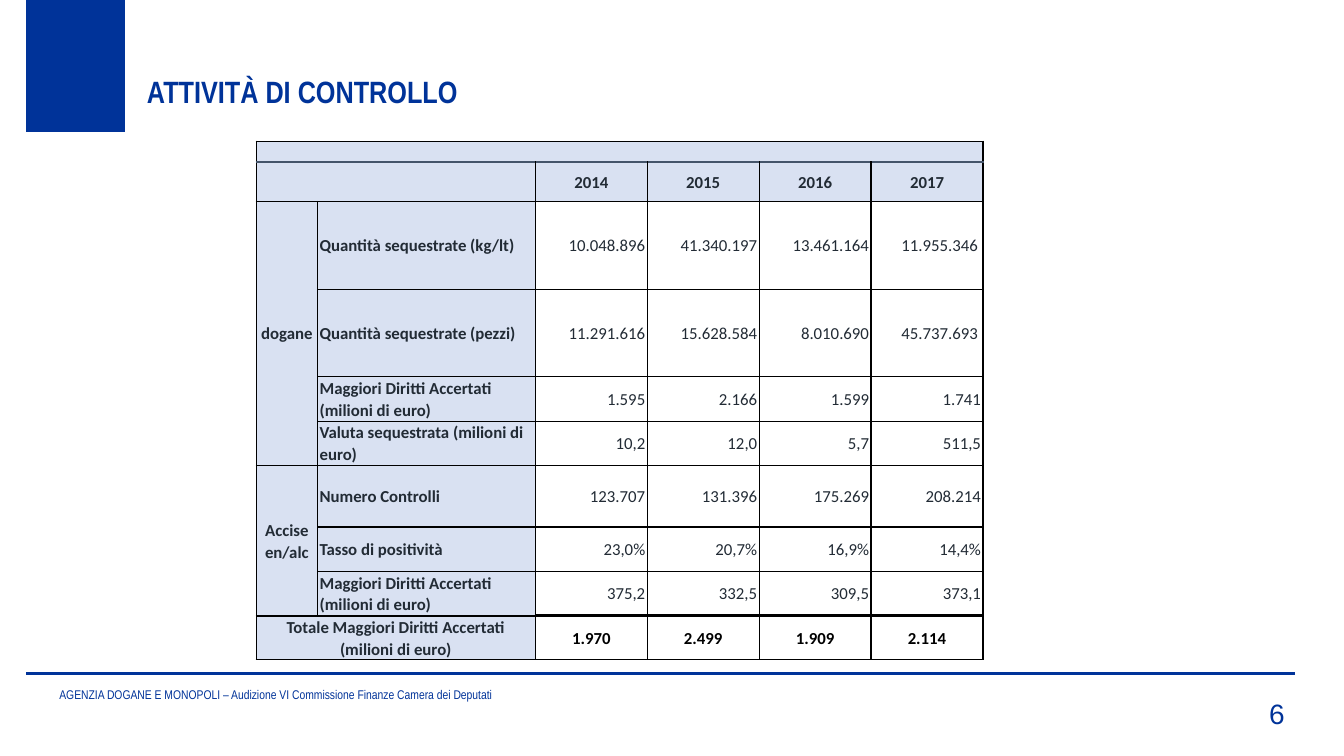
from dataclasses import dataclass

from lxml import etree
from pptx import Presentation
from pptx import util as u
from pptx.dml.color import RGBColor
from pptx.enum import shapes, text
from pptx.oxml import ns

COLORS = {
    "blue": "003399",
    "pale": "D9E1F2",
    "white": "FFFFFF",
    "black": "000000",
    "slate": "44546A",
    "ink": "222B35",
}
LEFT, CENTER, RIGHT = text.PP_ALIGN.LEFT, text.PP_ALIGN.CENTER, text.PP_ALIGN.RIGHT
TOP, BOTTOM = text.MSO_ANCHOR.TOP, text.MSO_ANCHOR.BOTTOM
COLUMN_WIDTHS = [0.61, 2.16] + [1.11] * 4
ROW_HEIGHTS = [0.21, 0.39, 0.87, 0.87, 0.44, 0.44, 0.61, 0.44, 0.44, 0.43]
HEADER_ROW, LAST_DETAIL_ROW, TOTAL_ROW = 1, 8, 9
FIRST_YEAR_COLUMN = 2
ROWS = [
    ["", "", "", "", "", ""],
    ["", "", "2014", "2015", "2016", "2017"],
    ["dogane", "Quantità sequestrate (kg/lt)", "10.048.896", "41.340.197", "13.461.164", "11.955.346"],
    ["", "Quantità sequestrate (pezzi)", "11.291.616", "15.628.584", "8.010.690", "45.737.693"],
    ["", "Maggiori Diritti Accertati (milioni di euro)", "1.595", "2.166", "1.599", "1.741"],
    ["", "Valuta sequestrata (milioni di euro)", "10,2", "12,0", "5,7", "511,5"],
    ["Accise en/alc", "Numero Controlli", "123.707", "131.396", "175.269", "208.214"],
    ["", "Tasso di positività", "23,0%", "20,7%", "16,9%", "14,4%"],
    ["", "Maggiori Diritti Accertati (milioni di euro)", "375,2", "332,5", "309,5", "373,1"],
    ["Totale Maggiori Diritti Accertati\n(milioni di euro)", "", "1.970", "2.499", "1.909", "2.114"],
]
MERGES = [((0, 0), (0, 5)), ((1, 0), (1, 1)), ((2, 0), (5, 0)), ((6, 0), (8, 0)), ((9, 0), (9, 1))]


@dataclass
class Label:
    words: str
    left: float
    top: float
    width: float
    height: float
    size: float
    font: str
    bold: bool = False
    align: text.PP_ALIGN = LEFT
    anchor: text.MSO_ANCHOR = TOP
    bottom_inset: float = 0.05


LABELS = [
    Label("ATTIVITÀ DI CONTROLLO", 1.36, 0.67, 11.74, 0.47, 22, "Arial Narrow", bold=True),
    Label("AGENZIA DOGANE E MONOPOLI – Audizione VI Commissione Finanze Camera dei Deputati",
          0.49, 6.61, 9.45, 0.4, 9, "Arial Narrow", anchor=BOTTOM),
    Label("6", 11.68, 6.71, 1.16, 0.54, 20, "Arial", align=RIGHT, anchor=BOTTOM, bottom_inset=0.01),
]


def color(name: str) -> RGBColor:
    return RGBColor.from_string(COLORS[name])


def style_font(para, size: float, font: str, tint: str, bold: bool) -> None:
    para.font.size = u.Pt(size)
    para.font.name = font
    para.font.color.rgb = color(tint)
    para.font.bold = bold


def draw_label(page, label: Label) -> None:
    box = page.shapes.add_textbox(*map(u.Inches, (label.left, label.top, label.width, label.height)))
    frame = box.text_frame
    frame.word_wrap = True
    frame.vertical_anchor = label.anchor
    frame.margin_bottom = u.Inches(label.bottom_inset)
    para = frame.paragraphs[0]
    para.text = label.words
    para.alignment = label.align
    style_font(para, label.size, label.font, "blue", label.bold)


def draw_frame(page) -> None:
    block = page.shapes.add_shape(shapes.MSO_SHAPE.RECTANGLE, *map(u.Inches, (0.26, 0, 0.98, 1.31)))
    block.shadow.inherit = False
    block.fill.solid()
    block.fill.fore_color.rgb = color("blue")
    block.line.fill.background()
    rule = page.shapes.add_connector(
        shapes.MSO_CONNECTOR.STRAIGHT, *map(u.Inches, (0.26, 6.68, 12.84, 6.68)))
    rule.line.color.rgb = color("blue")
    rule.line.width = u.Pt(2.25)
    etree.SubElement(rule._element.spPr, ns.qn("a:effectLst"))


def edge_style(row: int, column: int, side: str) -> tuple[str, float]:
    if (row, side) in ((0, "B"), (HEADER_ROW, "T")):
        return "slate", 1.5
    if (row, side) in ((LAST_DETAIL_ROW, "B"), (TOTAL_ROW, "T")):
        return "black", 2.25 if column >= FIRST_YEAR_COLUMN else 1.5
    if side == "B" and row == 6 and column == 0:
        return "black", 1.5
    return "black", 1


def draw_borders(cell, row: int, column: int) -> None:
    properties = cell._tc.get_or_add_tcPr()
    for side in "LRTB":
        tint, width = edge_style(row, column, side)
        line = etree.SubElement(properties, ns.qn(f"a:ln{side}"), w=str(u.Pt(width)))
        fill = etree.SubElement(line, ns.qn("a:solidFill"))
        etree.SubElement(fill, ns.qn("a:srgbClr"), val=COLORS[tint])


def fill_cell(cell, row: int, column: int, words: str) -> None:
    is_value = column >= FIRST_YEAR_COLUMN and HEADER_ROW < row < TOTAL_ROW
    is_total = column >= FIRST_YEAR_COLUMN and row == TOTAL_ROW
    is_padded = column == 5 and row in (2, 3)
    draw_borders(cell, row, column)
    cell.fill.solid()
    cell.fill.fore_color.rgb = color("white" if is_value or is_total else "pale")
    cell.vertical_anchor = text.MSO_ANCHOR.MIDDLE
    cell.margin_left = cell.margin_right = u.Inches(0.05 if is_padded else 0.02)
    cell.margin_top = cell.margin_bottom = u.Inches(0.01 if is_padded else 0)
    para = cell.text_frame.paragraphs[0]
    if not words:
        etree.SubElement(para._p, ns.qn("a:endParaRPr"), sz="1200")
        return
    if column == 0 and row < TOTAL_ROW:
        cell._tc.get_or_add_tcPr().set("vert", "wordArtVert")
    para.text = words
    para.line_spacing = 1.07
    para.alignment = RIGHT if is_value else LEFT if column == 1 else CENTER
    style_font(para, 12, "Calibri", "black" if is_total else "ink", not is_value)


def draw_table(page) -> None:
    table = page.shapes.add_table(
        len(ROW_HEIGHTS), len(COLUMN_WIDTHS), u.Inches(2.54), u.Inches(1.4),
        u.Inches(sum(COLUMN_WIDTHS)), u.Inches(sum(ROW_HEIGHTS))).table
    table.first_row = table.horz_banding = False
    for column, width in zip(table.columns, COLUMN_WIDTHS):
        column.width = u.Inches(width)
    for row, height in zip(table.rows, ROW_HEIGHTS):
        row.height = u.Inches(height)
    for start, end in MERGES:
        table.cell(*start).merge(table.cell(*end))
    for row, entries in enumerate(ROWS):
        for column, words in enumerate(entries):
            fill_cell(table.cell(row, column), row, column, words)


def main() -> None:
    deck = Presentation()
    deck.slide_width, deck.slide_height = u.Inches(13.33), u.Inches(7.5)
    page = deck.slides.add_slide(deck.slide_layouts[6])
    draw_frame(page)
    draw_table(page)
    for label in LABELS:
        draw_label(page, label)
    deck.save("out.pptx")


if __name__ == "__main__":
    main()
